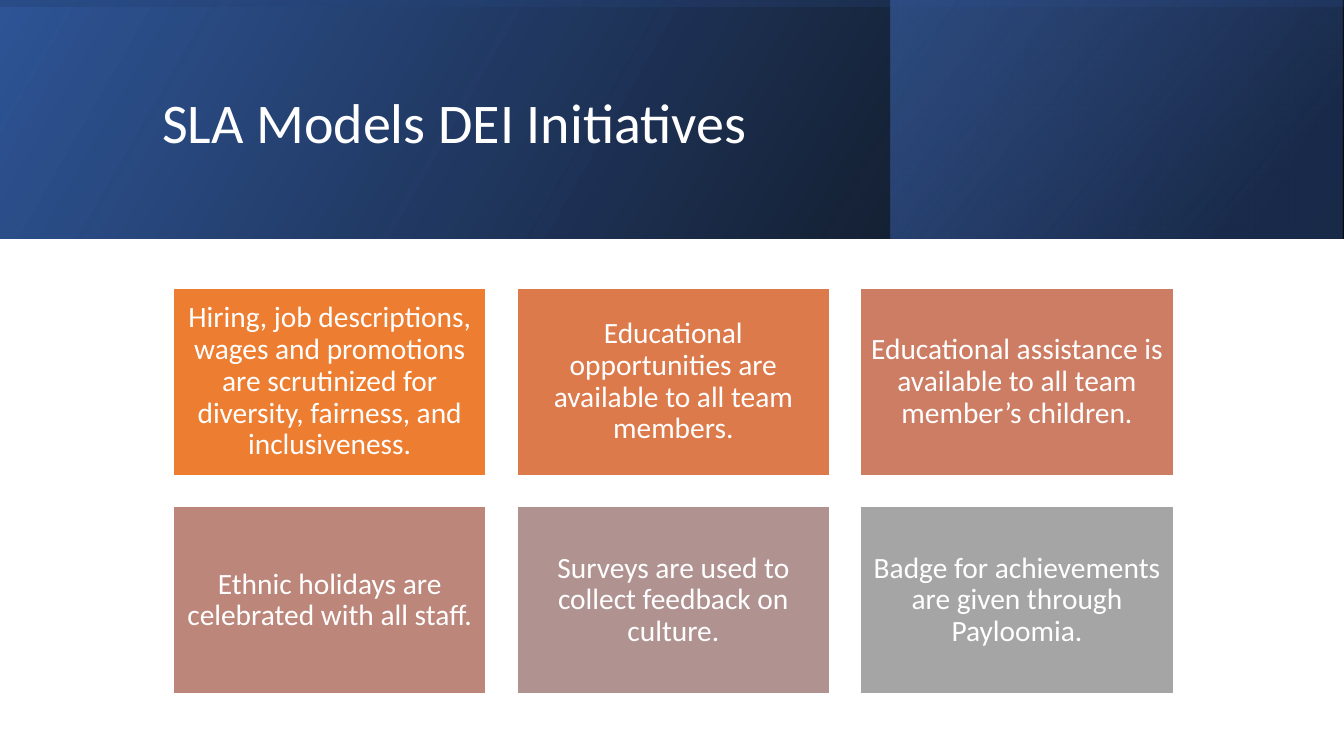
from pptx import Presentation
from pptx.dml.color import RGBColor
from pptx.enum.shapes import MSO_SHAPE
from pptx.enum.text import MSO_ANCHOR, PP_ALIGN
from pptx.oxml import parse_xml
from pptx.oxml.ns import nsdecls
from pptx.util import Cm, Pt

COLORS = {
    "white": "FFFFFF",
    "black": "000000",
    "navy": "203864",
    "deep_blue": "2F5597",
    "blue": "4472C4",
    "orange": "ED7D31",
    "copper": "DC7A4B",
    "coral": "CC7D64",
    "rose": "BD867B",
    "mauve": "B09391",
    "gray": "A5A5A5",
}
WIDTH, HEIGHT, BANNER_HEIGHT = 33.87, 19.05, 6.02

CARDS = [
    ("Hiring, job descriptions, wages and promotions are scrutinized for "
     "diversity, fairness, and inclusiveness.", "orange"),
    ("Educational opportunities are available to all team members.", "copper"),
    ("Educational assistance is available to all team member’s children.", "coral"),
    ("Ethnic holidays are celebrated with all staff.", "rose"),
    ("Surveys are used to collect feedback on culture.", "mauve"),
    ("Badge for achievements are given through Payloomia.", "gray"),
]
COLUMNS = 3
CARD_LEFT, CARD_TOP = 4.37, 7.26
CARD_WIDTH, CARD_HEIGHT = 7.88, 4.72
COLUMN_STEP, ROW_STEP = 8.66, 5.51


class SlideBuilder:
    font_name = "Calibri"

    def __init__(self, slide):
        self.slide = slide

    def rectangle(self, left, top, width, height):
        shape = self.slide.shapes.add_shape(
            MSO_SHAPE.RECTANGLE, Cm(left), Cm(top), Cm(width), Cm(height))
        shape.shadow.inherit = False
        return shape

    def gradient_panel(self, left, top, width, height, stops, angle, rotation=0):
        shape = self.rectangle(left, top, width, height)
        shape.rotation = rotation
        shape.line.fill.background()
        properties = shape._element.spPr
        properties.xfrm.set("flipH", "1")
        stop_list = "".join(
            f'<a:gs pos="{position * 1000}"><a:srgbClr val="{COLORS[color]}">'
            f'<a:alpha val="{opacity * 1000}"/></a:srgbClr></a:gs>'
            for position, color, opacity in stops)
        gradient = parse_xml(
            f'<a:gradFill {nsdecls("a")} rotWithShape="1"><a:gsLst>{stop_list}</a:gsLst>'
            f'<a:lin ang="{angle * 60000}" scaled="0"/></a:gradFill>')
        properties.prstGeom.addnext(gradient)

    def add_text(self, shape, text, size, alignment):
        frame = shape.text_frame
        frame.word_wrap = True
        frame.vertical_anchor = MSO_ANCHOR.MIDDLE
        paragraph = frame.paragraphs[0]
        paragraph.alignment = alignment
        paragraph.line_spacing = 0.9
        run = paragraph.add_run()
        run.text = text
        run.font.name = self.font_name
        run.font.size = Pt(size)
        run.font.color.rgb = RGBColor.from_string(COLORS["white"])

    def title(self, text, left, top, width, height):
        box = self.slide.shapes.add_textbox(Cm(left), Cm(top), Cm(width), Cm(height))
        self.add_text(box, text, 40, PP_ALIGN.LEFT)

    def card(self, text, color, left, top):
        shape = self.rectangle(left, top, CARD_WIDTH, CARD_HEIGHT)
        shape.fill.solid()
        shape.fill.fore_color.rgb = RGBColor.from_string(COLORS[color])
        shape.line.color.rgb = RGBColor.from_string(COLORS["white"])
        shape.line.width = Pt(1)
        frame = shape.text_frame
        frame.margin_left = frame.margin_right = Cm(0.22)
        frame.margin_top = frame.margin_bottom = Cm(0.22)
        self.add_text(shape, text, 21, PP_ALIGN.CENTER)


def main():
    presentation = Presentation()
    presentation.slide_width, presentation.slide_height = Cm(WIDTH), Cm(HEIGHT)
    builder = SlideBuilder(presentation.slides.add_slide(presentation.slide_layouts[6]))

    builder.gradient_panel(0, 0, WIDTH, BANNER_HEIGHT,
                           [(0, "black", 96), (100, "deep_blue", 100)], 330)
    builder.gradient_panel(22.45, 0, 11.39, BANNER_HEIGHT,
                           [(19, "navy", 68), (100, "blue", 48)], 320)
    offset = (WIDTH - BANNER_HEIGHT) / 2
    builder.gradient_panel(offset, -offset, BANNER_HEIGHT, WIDTH,
                           [(23, "deep_blue", 16), (99, "black", 45)], 350, rotation=270)
    builder.title("SLA Models DEI Initiatives", 3.84, 0.97, 27, 4.37)

    for index, (text, color) in enumerate(CARDS):
        row, column = divmod(index, COLUMNS)
        builder.card(text, color, CARD_LEFT + column * COLUMN_STEP, CARD_TOP + row * ROW_STEP)

    presentation.save("out.pptx")


if __name__ == "__main__":
    main()
